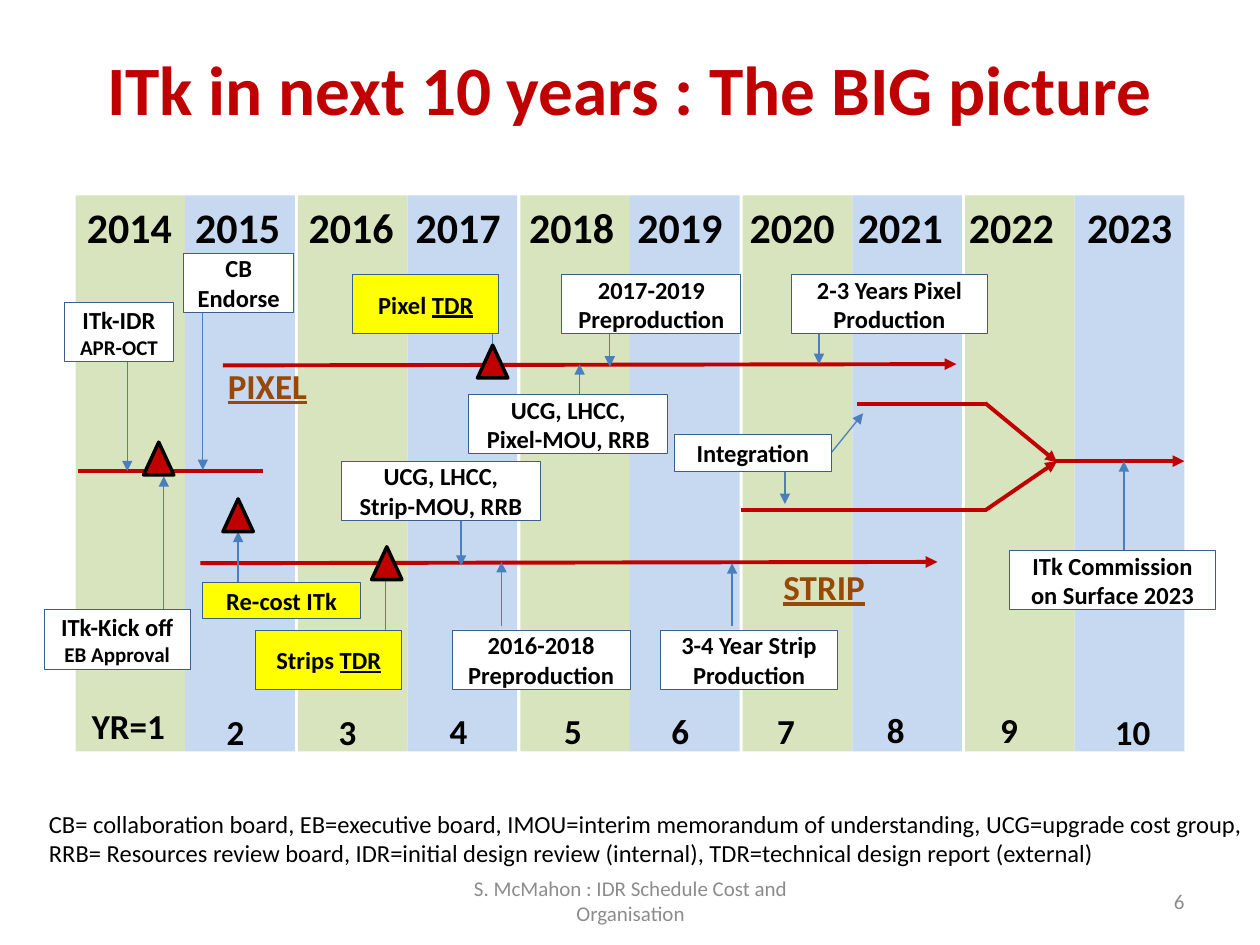
from lxml.etree import SubElement as Sub
from pptx import Presentation as Deck
from pptx.dml.color import RGBColor as Rgb
from pptx.enum.shapes import MSO_CONNECTOR as Link, MSO_SHAPE as Kind
from pptx.enum.text import MSO_ANCHOR as Anchor, PP_ALIGN as Align
from pptx.oxml.ns import qn
from pptx.util import Inches, Pt

THEME = {
    "font": "Calibri",
    "ink": "000000", "red": "C00000", "brown": "984807", "grey": "8C8C8C",
    "green": "D7E4BD", "sky": "C6D9F1", "white": "FFFFFF", "yellow": "FFFF00",
    "edge": "3A5F8C", "blue": "4B7EBC",
    "title": 39.6, "year": 24, "count": 20, "label": 14, "small": 12,
    "thick": 2.25, "rim": 2, "thin": 0.75, "hair": 0.5,
}
COLS, ROWS = 100, 75

TITLE = "ITk in next 10 years : The BIG picture"
FOOT = "S. McMahon : IDR Schedule Cost and Organisation"
PAGE = "6"
NOTE = ("CB= collaboration board, EB=executive board, IMOU=interim memorandum of "
        "understanding, UCG=upgrade cost group, RRB= Resources review board, "
        "IDR=initial design review (internal), TDR=technical design report (external)")

YEARS = [
    ("2014", 5.9, "YR=1", 6.3, 55.4), ("2015", 14.5, "2", 17, 55.9),
    ("2016", 23.5, "3", 25.9, 55.9), ("2017", 32, "4", 34.7, 55.8),
    ("2018", 41, "5", 43.8, 55.8), ("2019", 49.6, "6", 52.3, 55.8),
    ("2020", 58.5, "7", 60.7, 55.8), ("2021", 67.1, "8", 69.4, 55.7),
    ("2022", 75.9, "9", 78.4, 55.7), ("2023", 85.3, "10", 87.5, 55.9),
]
BAR = {"left": 6, "top": 15.5, "wide": 8.7, "high": 44.15, "pair": 17.65}
TRACKS = [("PIXEL", 17.1, 28.4), ("STRIP", 61.2, 44.4)]

PLAIN = [(6.2, 37.4, 20.9, 37.4), (58.8, 40.5, 78.3, 40.5), (68, 32.1, 78.3, 32.1)]
FLOWS = [
    (17.7, 29, 75.9, 28.9), (15.9, 44.7, 74.4, 44.6),
    (78.2, 32, 83.9, 36.7), (78.2, 40.5, 83.9, 36.6), (83.8, 36.6, 94, 36.6),
]
DROPS = [
    (10.1, 28.7, 37.4), (13, 48.4, 37.8), (16.1, 24.8, 37.3), (30.6, 50, 44.9),
    (39.1, 26.1, 29), (36.6, 40.5, 44.9), (39.8, 49.7, 44.6), (46, 34, 28.9),
    (62.3, 37.3, 40), (89.2, 43.7, 36.6), (58.1, 49.7, 44.7), (48.4, 26.2, 29.1),
    (65, 26.1, 28.9), (18.9, 47.2, 42.2),
]
SLANT = (66, 35.9, 68.5, 32.8)
STONES = [(17.7, 39.6), (29.5, 43.4), (37.9, 27.4), (11.4, 35.1)]

SMALL = {"size": Pt(THEME["small"])}
UNDER = {"underline": True}
BOXES = [
    (5.1, 24, 8.7, 4.7, "white", [["ITk-IDR"], [("APR-OCT", SMALL)]]),
    (3.5, 48.4, 11.6, 4.7, "white", [["ITk-Kick off"], [("EB Approval", SMALL)]]),
    (14.6, 20.1, 8.7, 4.7, "white", [["CB"], ["Endorse"]]),
    (80.1, 43.7, 16.4, 4.7, "white", [["ITk Commission"], ["on Surface 2023"]]),
    (20.3, 50, 11.6, 4.7, "yellow", [["Strips ", ("TDR", UNDER)]]),
    (28, 21.8, 11.6, 4.7, "yellow", [["Pixel ", ("TDR", UNDER)]]),
    (27.1, 36.6, 15.8, 4.7, "white", [["UCG, LHCC,"], ["Strip-MOU, RRB"]]),
    (37.2, 31.3, 15.8, 4.7, "white", [["UCG, LHCC,"], ["Pixel-MOU, RRB"]]),
    (35.9, 50, 14.1, 4.7, "white", [["2016-2018"], ["Preproduction"]]),
    (44.6, 21.8, 14.2, 4.7, "white", [["2017-2019"], ["Preproduction"]]),
    (52.4, 50, 14.1, 4.7, "white", [["3-4 Year Strip Production"]]),
    (62.8, 21.8, 15.6, 4.7, "white", [["2-3 Years Pixel Production"]]),
    (53.5, 34.5, 12.5, 2.9, "white", [["Integration"]]),
    (16.1, 46.2, 12.5, 2.9, "yellow", [["Re-cost ITk"]]),
]

deck = Deck()
deck.slide_width, deck.slide_height = Inches(10), Inches(7.5)
slide = deck.slides.add_slide(deck.slide_layouts[6])
shapes = slide.shapes


def grid(*spots):
    units = deck.slide_width / COLS, deck.slide_height / ROWS
    return [round(spot * units[i % 2]) for i, spot in enumerate(spots)]


def tint(name):
    return Rgb.from_string(THEME[name])


def apply(thing, form):
    for key, value in form.items():
        setattr(thing, key, value)


def write(shape, lines, size, ink="ink", align=Align.LEFT, wrap=True,
          anchor=Anchor.TOP, **form):
    frame = shape.text_frame
    apply(frame, {"word_wrap": wrap, "vertical_anchor": anchor})
    for i, line in enumerate(lines):
        para = frame.add_paragraph() if i else frame.paragraphs[0]
        para.alignment = align
        for item in line:
            text, extra = (item, {}) if isinstance(item, str) else item
            run = para.add_run()
            run.text = text
            base = {"name": THEME["font"], "size": Pt(THEME[size])}
            apply(run.font, base | form | extra)
            run.font.color.rgb = tint(ink)


def label(spot, text, size, **form):
    write(shapes.add_textbox(*grid(*spot)), [[text]], size, **form)


def block(kind, spot, fill, edge=None, width=0):
    shape = shapes.add_shape(kind, *grid(*spot))
    shape.shadow.inherit = False
    shape.fill.solid()
    shape.fill.fore_color.rgb = tint(fill)
    if edge:
        shape.line.color.rgb = tint(edge)
        shape.line.width = Pt(THEME[width])
    else:
        shape.line.fill.background()
    return shape


def stroke(ends, ink, width, head=True):
    line = shapes.add_connector(Link.STRAIGHT, *grid(*ends))
    line.line.color.rgb = tint(ink)
    line.line.width = Pt(THEME[width])
    if head:
        Sub(line.line._get_or_add_ln(), qn("a:tailEnd"), type="triangle")
    Sub(line._element.spPr, qn("a:effectLst"))


for i in range(len(YEARS)):
    pair, odd = divmod(i, 2)
    left = BAR["left"] + pair * BAR["pair"] + odd * BAR["wide"]
    block(Kind.RECTANGLE, (left, BAR["top"], BAR["wide"], BAR["high"]),
          ("green", "sky")[odd])

mid = {"align": Align.CENTER, "anchor": Anchor.MIDDLE}
label((5, 0.7, 90, 12.5), TITLE, "title", ink="red", bold=True, **mid)
for year, left, count, start, top in YEARS:
    label((left, 15.5, 8.8, 5), year, "year", wrap=False, bold=True)
    label((start, top, 1.9 + 1.5 * len(count), 4.4), count, "count",
          wrap=False, bold=True)
for name, left, top in TRACKS:
    label((left, top, 10, 4.4), name, "count", ink="brown",
          bold=True, underline=True)

for ends in PLAIN:
    stroke(ends, "red", "thick", head=False)
for ends in FLOWS:
    stroke(ends, "red", "thick")
for x, start, end in DROPS:
    stroke((x, start, x, end), "blue", "thin")
stroke(SLANT, "blue", "thin")

for *spot, fill, lines in BOXES:
    box = block(Kind.RECTANGLE, spot, fill, "edge", "hair")
    write(box, lines, "label", bold=True, **mid)
for left, top in STONES:
    block(Kind.ISOSCELES_TRIANGLE, (left, top, 2.4, 2.6), "red", "ink", "rim")

label((2.9, 63.7, 97.6, 5.9), NOTE, "label")
label((34.2, 69.5, 31.7, 4), FOOT, "small", ink="grey", **mid)
label((71.7, 69.5, 23.3, 4), PAGE, "small", ink="grey",
      align=Align.RIGHT, anchor=Anchor.MIDDLE)

deck.save("out.pptx")
